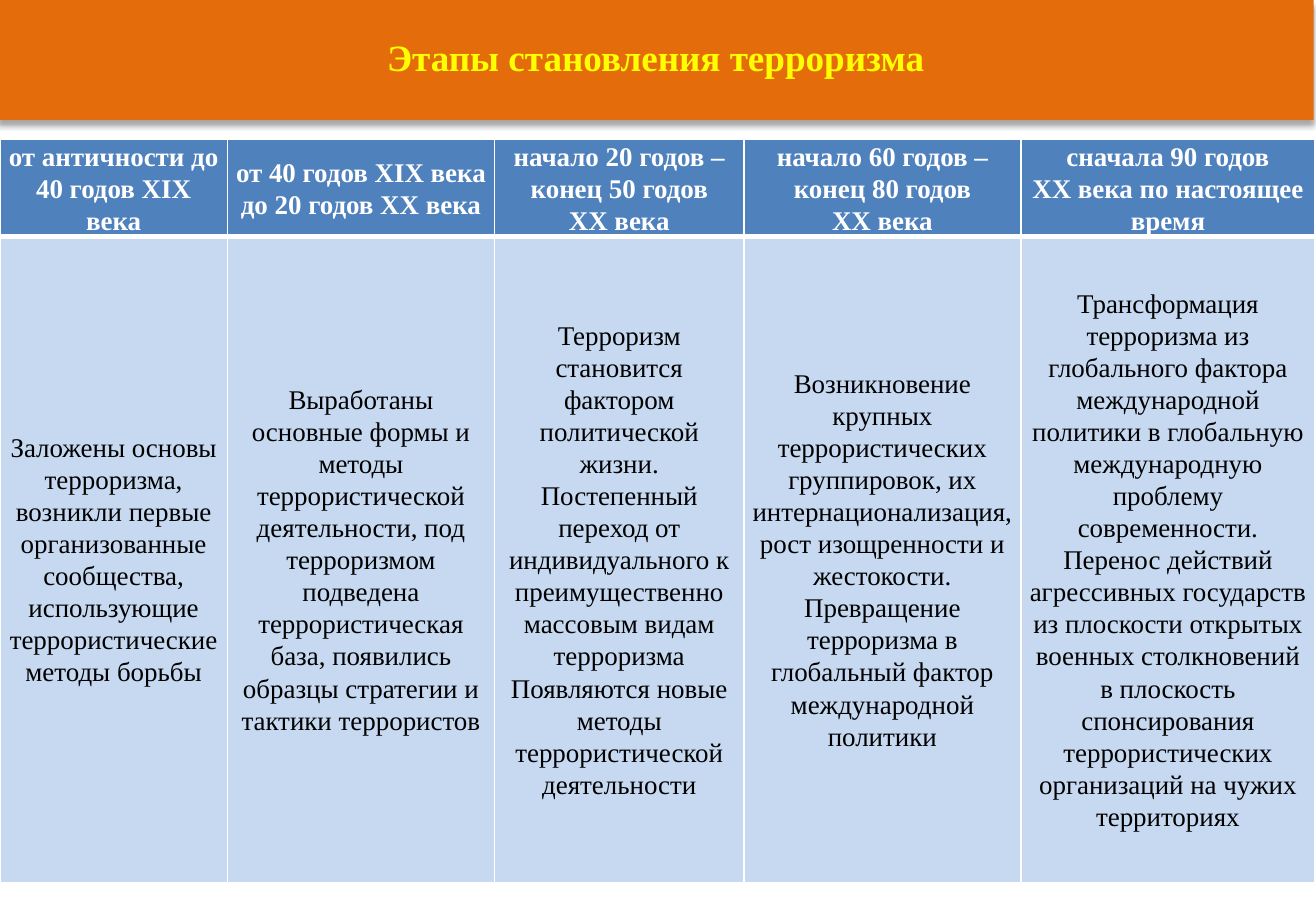
from dataclasses import dataclass

from lxml.etree import SubElement
from pptx import Presentation
from pptx.dml.color import RGBColor
from pptx.enum.text import MSO_ANCHOR, MSO_AUTO_SIZE, PP_ALIGN
from pptx.oxml.ns import qn
from pptx.util import Cm, Pt


@dataclass(frozen=True)
class Theme:
    font: str = "Times New Roman"
    banner: str = "E46C0A"
    title: str = "FFFF00"
    header: str = "4F81BD"
    header_text: str = "FFFFFF"
    body: str = "C6D9F1"
    body_text: str = "000000"
    border: str = "FFFFFF"
    shadow: str = "000000"
    title_size: int = 22
    table_size: int = 16


theme = Theme()

# Column width in cm, period, description
STAGES = [
    (4.75, "от античности до 40 годов XIX века",
     "Заложены основы терроризма, возникли первые организованные сообщества, "
     "использующие террористические методы борьбы"),
    (5.59, "от 40 годов XIX века до 20 годов ХХ века",
     "Выработаны основные формы и методы террористической деятельности, под "
     "терроризмом подведена террористическая база, появились образцы стратегии "
     "и тактики террористов"),
    (5.21, "начало 20 годов – конец 50 годов\nХХ века",
     "Терроризм становится фактором политической жизни. Постепенный переход от "
     "индивидуального к преимущественно массовым видам терроризма Появляются "
     "новые методы террористической деятельности"),
    (5.79, "начало 60 годов – конец 80 годов\nХХ века",
     "Возникновение крупных террористических группировок, их "
     "интернационализация, рост изощренности и жестокости. Превращение "
     "терроризма в глобальный фактор международной политики"),
    (6.15, "сначала 90 годов\nХХ века по настоящее время",
     "Трансформация терроризма из глобального фактора международной политики в "
     "глобальную международную проблему современности. Перенос действий "
     "агрессивных государств из плоскости открытых военных столкновений в "
     "плоскость спонсирования террористических организаций на чужих территориях"),
]
ROW_HEIGHTS = [2.03, 13.51]


def format_paragraphs(text_frame, size, color, bold):
    for paragraph in text_frame.paragraphs:
        paragraph.alignment = PP_ALIGN.CENTER
        for run in paragraph.runs:
            run.font.name = theme.font
            run.font.size = Pt(size)
            run.font.bold = bold
            run.font.color.rgb = RGBColor.from_string(color)


def add_border(cell, side, width):
    """Draw one cell edge; side is L, R, T or B and width is in points."""
    line = SubElement(cell._tc.get_or_add_tcPr(), qn(f"a:ln{side}"), w=str(Pt(width)))
    fill = SubElement(line, qn("a:solidFill"))
    SubElement(fill, qn("a:srgbClr"), val=theme.border)


presentation = Presentation()
presentation.slide_width = Cm(27.51)
presentation.slide_height = Cm(19.05)
slide = presentation.slides.add_slide(presentation.slide_layouts[5])

# Title banner
title = slide.shapes.title
title.left, title.top, title.width, title.height = Cm(-0.05), Cm(0), Cm(27.51), Cm(2.51)
title.fill.solid()
title.fill.fore_color.rgb = RGBColor.from_string(theme.banner)
effects = SubElement(title._element.spPr, qn("a:effectLst"))
shadow = SubElement(effects, qn("a:outerShdw"), blurRad=str(Pt(3)), dist=str(Pt(3)),
                    dir="5400000", rotWithShape="0")
shadow_color = SubElement(shadow, qn("a:srgbClr"), val=theme.shadow)
SubElement(shadow_color, qn("a:alpha"), val="35000")

title_frame = title.text_frame
title_frame.text = "Этапы становления терроризма"
title_frame.auto_size = MSO_AUTO_SIZE.NONE
title_frame.vertical_anchor = MSO_ANCHOR.MIDDLE
title_frame.margin_left = title_frame.margin_right = Cm(0.28)
title_frame.margin_top, title_frame.margin_bottom = Cm(0), Cm(0.15)
format_paragraphs(title_frame, theme.title_size, theme.title, True)

# Table of stages
table_width = sum(width for width, _, _ in STAGES)
table = slide.shapes.add_table(len(ROW_HEIGHTS), len(STAGES), Cm(0), Cm(2.92),
                               Cm(table_width), Cm(sum(ROW_HEIGHTS))).table
for row, height in zip(table.rows, ROW_HEIGHTS):
    row.height = Cm(height)

row_styles = [
    (theme.header, theme.header_text, True, {"L": 1, "R": 1, "T": 1, "B": 3}),
    (theme.body, theme.body_text, False, {"L": 1, "R": 1, "T": 3, "B": 1}),
]
for column_index, (width, *texts) in enumerate(STAGES):
    table.columns[column_index].width = Cm(width)
    for row_index, (text, style) in enumerate(zip(texts, row_styles)):
        fill_color, text_color, bold, borders = style
        cell = table.cell(row_index, column_index)
        cell.text_frame.text = text
        cell.vertical_anchor = MSO_ANCHOR.MIDDLE
        cell.margin_left = cell.margin_right = Cm(0.15)
        cell.margin_top = cell.margin_bottom = Cm(0)
        for side, border_width in borders.items():
            add_border(cell, side, border_width)
        cell.fill.solid()
        cell.fill.fore_color.rgb = RGBColor.from_string(fill_color)
        format_paragraphs(cell.text_frame, theme.table_size, text_color, bold)
        for paragraph in cell.text_frame.paragraphs:
            paragraph.line_spacing = 1.07

presentation.save("out.pptx")
